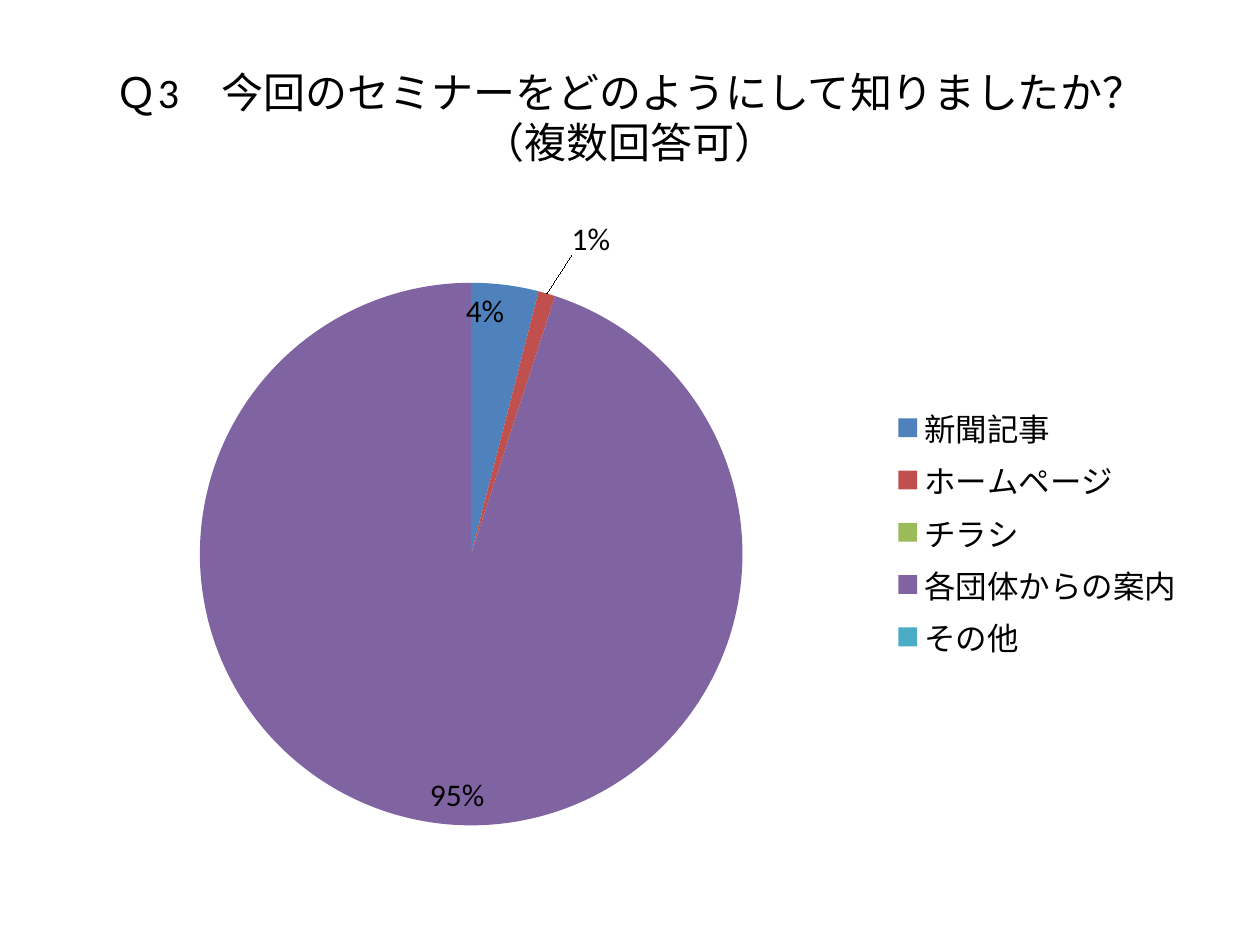
from pptx import Presentation
from pptx.chart.data import CategoryChartData as Data
from pptx.dml.color import RGBColor as Rgb
from pptx.enum.chart import XL_CHART_TYPE as Kind, XL_LABEL_POSITION as Spot, XL_LEGEND_POSITION as Side
from pptx.enum.text import MSO_ANCHOR as Anchor, PP_ALIGN as Align
from pptx.oxml import parse_xml
from pptx.oxml.ns import nsdecls
from pptx.util import Inches, Pt

WIDE, HIGH = Inches(10), Inches(7.5)
FACE = "Calibri"
HUES = {
    "text": "000000",
    "新聞記事": "4F81BD",
    "ホームページ": "C0504D",
    "チラシ": "9BBB59",
    "各団体からの案内": "8064A2",
    "その他": "4BACC6",
}
SHARES = {"新聞記事": 4, "ホームページ": 1, "チラシ": 0, "各団体からの案内": 95, "その他": 0}
TITLE = ["Ｑ3\u3000今回のセミナーをどのようにして知りましたか？".replace("\u3000", "　"), "（複数回答可）"]


def area(x, y, w, h):
    return int(WIDE * x), int(HIGH * y), int(WIDE * w), int(HIGH * h)


def style(font, size):
    font.name = FACE
    font.size = Pt(size)
    font.color.rgb = Rgb.from_string(HUES["text"])


def add_title(slide, lines, box):
    frame = slide.shapes.add_textbox(*box).text_frame
    frame.word_wrap = True
    frame.vertical_anchor = Anchor.MIDDLE
    para = frame.paragraphs[0]
    para.alignment = Align.CENTER
    for row, line in enumerate(lines):
        if row:
            para.add_line_break()
        run = para.add_run()
        run.text = line
        style(run.font, 24)


def layout(x, y, w=None, h=None):
    size = "" if w is None else f'<c:w val="{w}"/><c:h val="{h}"/>'
    mode = "" if w is None else '<c:xMode val="edge"/><c:yMode val="edge"/>'
    inner = '<c:layoutTarget val="inner"/>' if w == h or w == 0.48 else ""
    return (f'<c:layout {nsdecls("c")}><c:manualLayout>{inner}{mode}'
            f'<c:x val="{x}"/><c:y val="{y}"/>{size}</c:manualLayout></c:layout>')


def place(part, xml):
    for old in part.xpath("./c:layout"):
        part.remove(old)
    part.insert(0, parse_xml(xml))


def add_label(labels, spot, index, body):
    labels.insert(spot, parse_xml(
        f'<c:dLbl {nsdecls("c")}><c:idx val="{index}"/>{body}</c:dLbl>'))


def set_labels(series):
    labels = series.data_labels
    labels.show_value = False
    labels.show_percentage = True
    labels.number_format = "0%"
    labels.number_format_is_linked = False
    labels.position = Spot.INSIDE_END
    style(labels.font, 18)
    node = series._element.xpath("./c:dLbls")[0]
    for lead in node.xpath("./c:showLeaderLines"):
        lead.set("val", "1")
    if not node.xpath("./c:showLeaderLines"):
        node.append(parse_xml(f'<c:showLeaderLines {nsdecls("c")} val="1"/>'))
    flags = "".join(
        f'<c:show{name} val="{int(name == "Percent")}"/>'
        for name in ("LegendKey", "Val", "CatName", "SerName", "Percent", "BubbleSize"))
    spot = 0
    for index, value in enumerate(SHARES.values()):
        if value == 0:
            body = '<c:delete val="1"/>'
        elif value == 1:
            body = layout(0.02, -0.05) + '<c:dLblPos val="outEnd"/>' + flags
        else:
            continue
        add_label(node, spot, index, body)
        spot += 1


def add_pie(slide, box):
    data = Data()
    data.categories = list(SHARES)
    data.add_series("Series 1", list(SHARES.values()))
    chart = slide.shapes.add_chart(Kind.PIE, *box, data).chart
    chart.has_title = False
    style(chart.font, 18)
    chart.has_legend = True
    legend = chart.legend
    legend.position = Side.RIGHT
    legend.include_in_layout = False
    style(legend.font, 18)
    plot = chart.plots[0]
    plot.vary_by_categories = True
    series = plot.series[0]
    for index, name in enumerate(SHARES):
        fill = series.points[index].format.fill
        fill.solid()
        fill.fore_color.rgb = Rgb.from_string(HUES[name])
    set_labels(series)
    place(chart._chartSpace.xpath("./c:chart/c:plotArea")[0], layout(0.12, 0.1, 0.48, 0.87))


def main():
    deck = Presentation()
    deck.slide_width, deck.slide_height = WIDE, HIGH
    slide = deck.slides.add_slide(deck.slide_layouts[6])
    add_title(slide, TITLE, area(0.05, 0.04, 0.9, 1 / 6))
    add_pie(slide, area(0.05, 0.7 / 3, 0.9, 0.66))
    deck.save("out.pptx")


if __name__ == "__main__":
    main()
